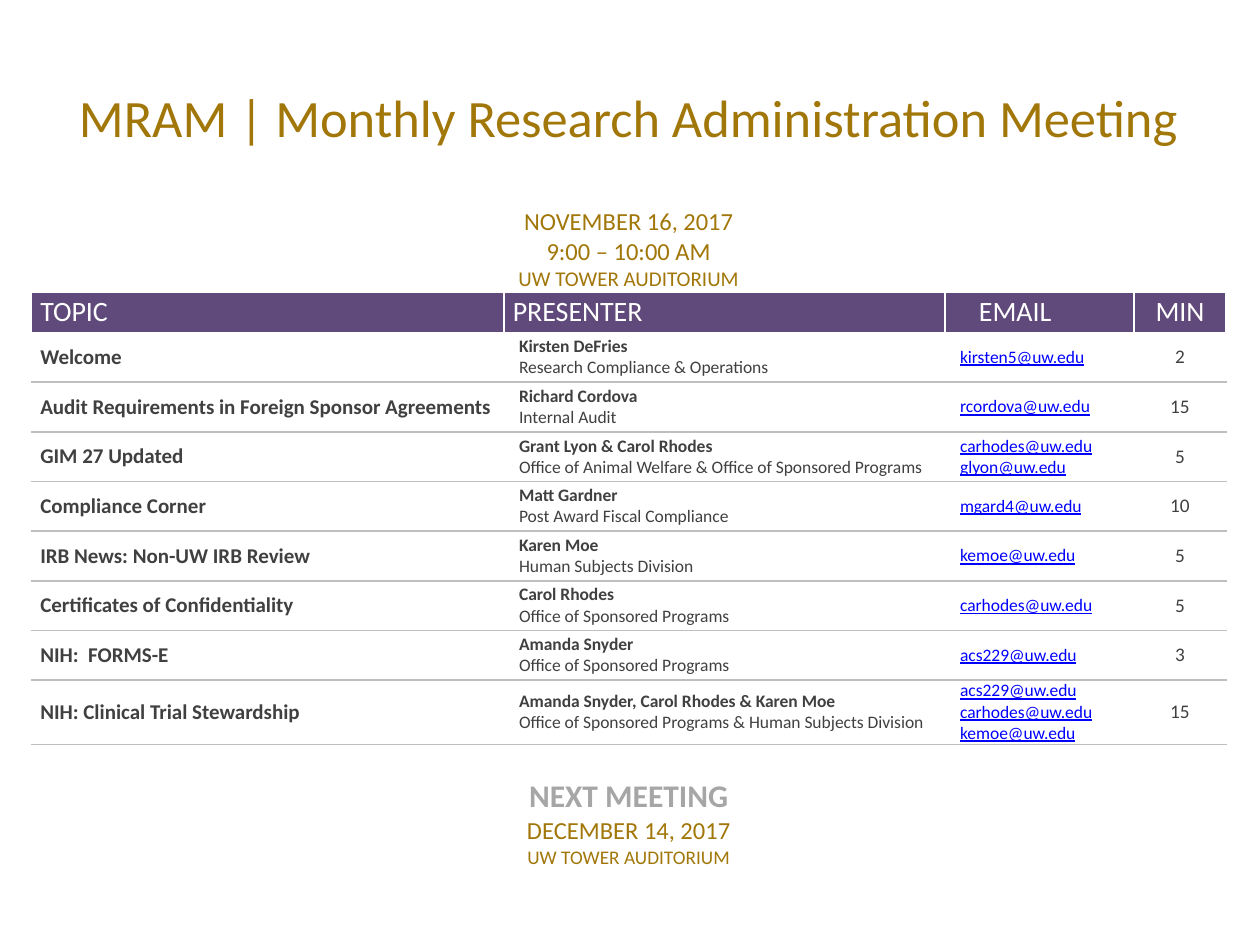
from dataclasses import dataclass

from lxml import etree
from pptx import Presentation
from pptx.dml.color import RGBColor
from pptx.enum import text
from pptx.oxml import ns
from pptx.util import Inches, Pt

GOLD, PURPLE, WHITE = "A2770A", "604A7B", "FFFFFF"
DARK, GREY, BLUE, RULE = "404040", "A6A6A6", "0000FF", "BFBFBF"
LEFT, CENTER = text.PP_ALIGN.LEFT, text.PP_ALIGN.CENTER
MIDDLE, BOTTOM = text.MSO_ANCHOR.MIDDLE, text.MSO_ANCHOR.BOTTOM


@dataclass
class Line:
    words: str
    size: float
    color: str = DARK
    bold: bool = False
    under: bool = False


@dataclass
class Topic:
    title: str
    who: str
    office: str
    mails: list[str]
    mins: int


TOPICS = [
    Topic("Welcome", "Kirsten DeFries", "Research Compliance & Operations", ["kirsten5"], 2),
    Topic("Audit Requirements in Foreign Sponsor Agreements", "Richard Cordova",
          "Internal Audit", ["rcordova"], 15),
    Topic("GIM 27 Updated", "Grant Lyon & Carol Rhodes",
          "Office of Animal Welfare & Office of Sponsored Programs", ["carhodes", "glyon"], 5),
    Topic("Compliance Corner", "Matt Gardner", "Post Award Fiscal Compliance", ["mgard4"], 10),
    Topic("IRB News: Non-UW IRB Review", "Karen Moe", "Human Subjects Division", ["kemoe"], 5),
    Topic("Certificates of Confidentiality", "Carol Rhodes",
          "Office of Sponsored Programs", ["carhodes"], 5),
    Topic("NIH:  FORMS-E", "Amanda Snyder", "Office of Sponsored Programs", ["acs229"], 3),
    Topic("NIH: Clinical Trial Stewardship", "Amanda Snyder, Carol Rhodes & Karen Moe",
          "Office of Sponsored Programs & Human Subjects Division",
          ["acs229", "carhodes", "kemoe"], 15),
]
WIDTHS = [3.75, 3.5, 1.5, 0.73]
FIRST = 3  # first topic row, below title, date and heading
FOOT = FIRST + len(TOPICS)
HEIGHTS = [0.87, 1.12, 0.32] + [2.76 / 7] * 7 + [0.51, 1.06]


def rgb(code: str) -> RGBColor:
    return RGBColor.from_string(code)


def write(cell, lines: list[Line], align=LEFT, anchor=MIDDLE,
          pad: float = 0.07, top: float = 0, fill: str = WHITE) -> None:
    """Fill a cell and set one paragraph for each line."""
    cell.fill.solid()
    cell.fill.fore_color.rgb = rgb(fill)
    cell.vertical_anchor = anchor
    cell.margin_left, cell.margin_right = Inches(pad), Inches(0.07)
    cell.margin_top, cell.margin_bottom = Inches(top), 0
    frame = cell.text_frame
    for i, line in enumerate(lines):
        para = frame.paragraphs[0] if i == 0 else frame.add_paragraph()
        para.text, para.alignment = line.words, align
        font = para.font
        font.name, font.size = "Calibri", Pt(line.size)
        font.bold, font.underline = line.bold, line.under
        font.color.rgb = rgb(line.color)


def edge(cell, sides: str) -> None:
    """Draw thin grey rules on the named sides, T before B."""
    props = cell._tc.get_or_add_tcPr()
    for i, side in enumerate(sides):
        rule = etree.Element(ns.qn(f"a:ln{side}"), w=str(Pt(1)))
        fill = etree.SubElement(rule, ns.qn("a:solidFill"))
        etree.SubElement(fill, ns.qn("a:srgbClr"), val=RULE)
        props.insert(i, rule)


def banner(table, row: int, lines: list[Line], anchor=MIDDLE, top: float = 0) -> None:
    """Write centred lines across the whole row."""
    cell = table.cell(row, 0)
    cell.merge(table.cell(row, len(WIDTHS) - 1))
    write(cell, lines, CENTER, anchor, top=top)


def agenda(table, row: int, topic: Topic) -> None:
    cells = table.rows[row].cells
    write(cells[0], [Line(topic.title, 12, bold=True)])
    write(cells[1], [Line(topic.who, 10, bold=True), Line(topic.office, 10)], pad=0.12)
    mails = [Line(f"{name}@uw.edu", 10, BLUE, under=True) for name in topic.mails]
    write(cells[2], mails, pad=0.12)
    write(cells[3], [Line(str(topic.mins), 11)], CENTER)
    for cell in cells:
        edge(cell, "B" if row == FIRST else "TB")


def main() -> None:
    deck = Presentation()
    deck.slide_width, deck.slide_height = Inches(10), Inches(7.5)
    slide = deck.slides.add_slide(deck.slide_layouts[6])
    table = slide.shapes.add_table(
        len(HEIGHTS), len(WIDTHS), Inches(0.25), Inches(0.33),
        Inches(sum(WIDTHS)), Inches(sum(HEIGHTS))).table
    table.first_row = table.horz_banding = False
    for col, width in zip(table.columns, WIDTHS):
        col.width = Inches(width)
    for row, height in zip(table.rows, HEIGHTS):
        row.height = Inches(height)

    banner(table, 0, [Line("MRAM | Monthly Research Administration Meeting", 30, GOLD)], BOTTOM)
    banner(table, 1, [Line("NOVEMBER 16, 2017", 14, GOLD),
                      Line("9:00 – 10:00 AM", 14, GOLD),
                      Line("UW TOWER AUDITORIUM", 12, GOLD)], BOTTOM)
    heads = [("TOPIC", LEFT, 0.07), ("PRESENTER", LEFT, 0.07),
             ("EMAIL", LEFT, 0.27), ("MIN", CENTER, 0.07)]
    for cell, (word, align, pad) in zip(table.rows[2].cells, heads):
        write(cell, [Line(word, 16, WHITE)], align, pad=pad, fill=PURPLE)
    for row, topic in enumerate(TOPICS, FIRST):
        agenda(table, row, topic)
    banner(table, FOOT, [Line("NEXT MEETING", 18, GREY, bold=True),
                         Line("DECEMBER 14, 2017", 14, GOLD),
                         Line("UW TOWER AUDITORIUM", 11, GOLD)], top=0.2)
    for cell in table.rows[FOOT].cells:
        edge(cell, "T")
    deck.save("out.pptx")


if __name__ == "__main__":
    main()
